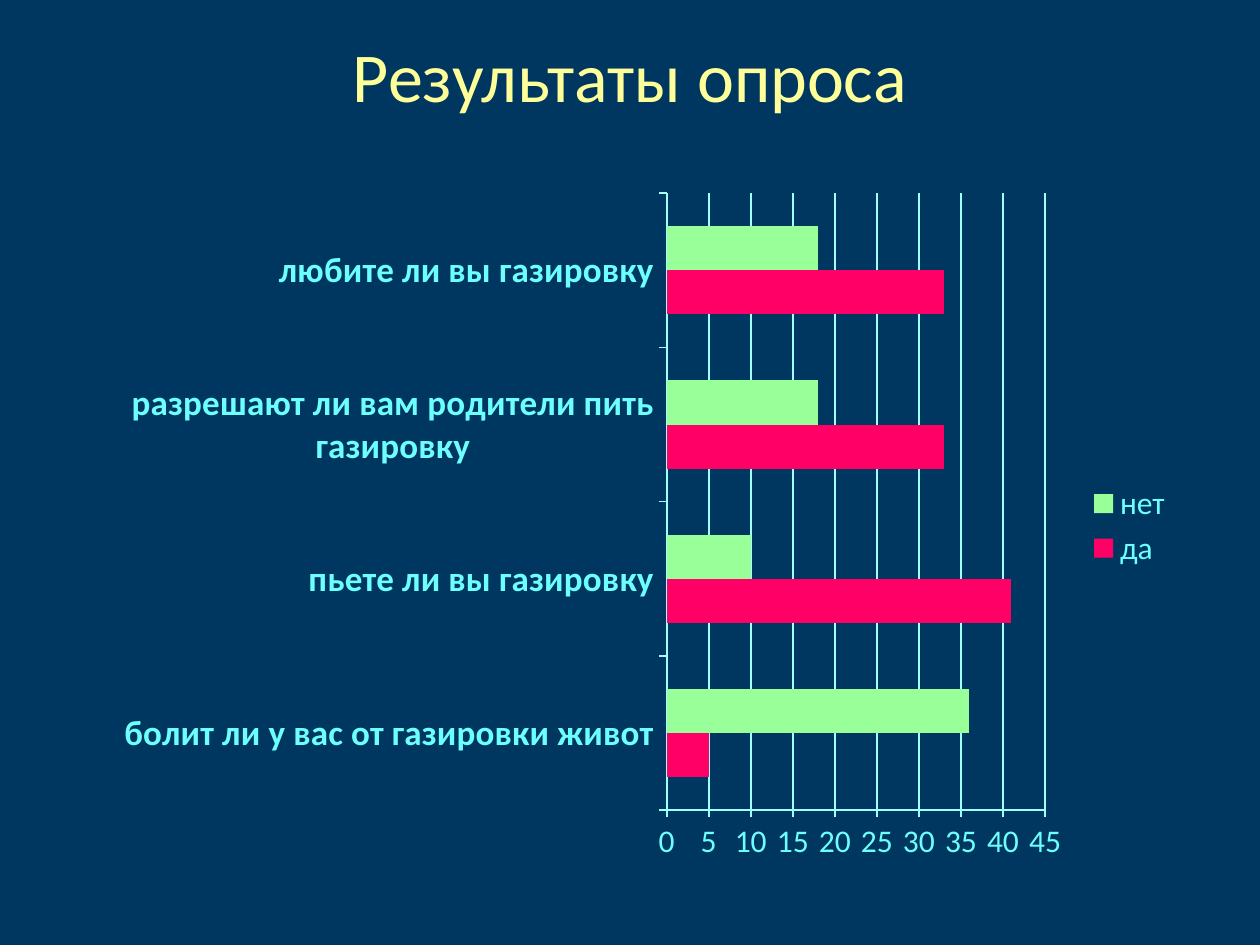
from lxml.etree import SubElement
from pptx import Presentation
from pptx.chart.data import CategoryChartData
from pptx.dml.color import RGBColor
from pptx.enum.chart import XL_CHART_TYPE as ChartType
from pptx.enum.chart import XL_LEGEND_POSITION as LegendPosition
from pptx.enum.chart import XL_TICK_MARK as TickMark
from pptx.enum.text import MSO_ANCHOR, PP_ALIGN
from pptx.oxml.ns import qn
from pptx.util import Inches, Pt

FONT = "Calibri"
NAVY = RGBColor(0x00, 0x37, 0x60)
YELLOW = RGBColor(0xFF, 0xFF, 0x99)
CYAN = RGBColor(0x6D, 0xFF, 0xFE)
PALE_CYAN = RGBColor(0x9D, 0xFF, 0xFE)
PINK = RGBColor(0xFF, 0x00, 0x66)
GREEN = RGBColor(0x99, 0xFF, 0x99)

QUESTIONS = (
    "болит ли у вас от газировки живот",
    "пьете ли вы газировку",
    "разрешают ли вам родители пить газировку",
    "любите ли вы газировку",
)
ANSWERS = (
    ("да", (5, 41, 33, 33), PINK),
    ("нет", (36, 10, 18, 18), GREEN),
)


def style_font(font, size, color, bold=False):
    font.name = FONT
    font.size = Pt(size)
    font.bold = bold
    font.color.rgb = color


def style_line(line):
    line.color.rgb = PALE_CYAN
    line.width = Pt(1)


def place_title(slide, box):
    title = slide.shapes.title
    title.left, title.top, title.width, title.height = box
    frame = title.text_frame
    frame.word_wrap = True
    frame.vertical_anchor = MSO_ANCHOR.MIDDLE
    paragraph = frame.paragraphs[0]
    paragraph.alignment = PP_ALIGN.CENTER
    run = paragraph.add_run()
    run.text = "Результаты опроса"
    style_font(run.font, 40, YELLOW)
    # The closing line break lifts the heading above the middle
    paragraph.add_line_break()
    style_font(paragraph.font, 40, YELLOW)


def fix_plot_area(chart, **shares):
    """Set the inner plot area as shares of the chart's size."""
    plot_area = chart.plots[0]._element.getparent()
    layout = plot_area.find(qn("c:layout"))
    if layout is None:
        layout = SubElement(plot_area, qn("c:layout"))
        plot_area.insert(0, layout)
    manual = SubElement(layout, qn("c:manualLayout"))
    settings = {"layoutTarget": "inner", "xMode": "edge", "yMode": "edge", **shares}
    for name, value in settings.items():
        SubElement(manual, qn(f"c:{name}")).set("val", str(value))


def place_survey_chart(slide, box):
    data = CategoryChartData()
    data.categories = QUESTIONS
    for name, values, _ in ANSWERS:
        data.add_series(name, values)
    chart = slide.shapes.add_chart(ChartType.BAR_CLUSTERED, *box, data).chart
    chart.has_title = False
    style_font(chart.font, 18, CYAN)
    fix_plot_area(chart, x=0.52, y=0.02, w=0.35, h=0.89)

    # Bars
    plot = chart.plots[0]
    plot.vary_by_categories = False
    plot.gap_width = 150
    plot.overlap = 0
    for series, (_, _, color) in zip(plot.series, ANSWERS):
        series.format.fill.solid()
        series.format.fill.fore_color.rgb = color

    # Axes
    for axis, size, bold in ((chart.category_axis, 20, True), (chart.value_axis, 18, False)):
        axis.major_tick_mark = TickMark.OUTSIDE
        style_line(axis.format.line)
        style_font(axis.tick_labels.font, size, CYAN, bold)
    values = chart.value_axis
    values.minimum_scale, values.maximum_scale, values.major_unit = 0, 45, 5
    values.has_major_gridlines = True
    style_line(values.major_gridlines.format.line)

    # Legend
    chart.has_legend = True
    chart.legend.position = LegendPosition.RIGHT
    chart.legend.include_in_layout = False
    style_font(chart.legend.font, 18, CYAN)


def main():
    presentation = Presentation()
    presentation.slide_width = width = Inches(10)
    presentation.slide_height = height = Inches(7.5)

    def share(left, top, across, down):
        return int(left * width), int(top * height), int(across * width), int(down * height)

    title_only = presentation.slide_layouts[5]
    slide = presentation.slides.add_slide(title_only)
    slide.background.fill.solid()
    slide.background.fill.fore_color.rgb = NAVY
    place_title(slide, share(0.05, 0.04, 0.9, 1 / 6))
    place_survey_chart(slide, share(0.083, 0.19, 0.858, 0.733))
    presentation.save("out.pptx")


if __name__ == "__main__":
    main()
